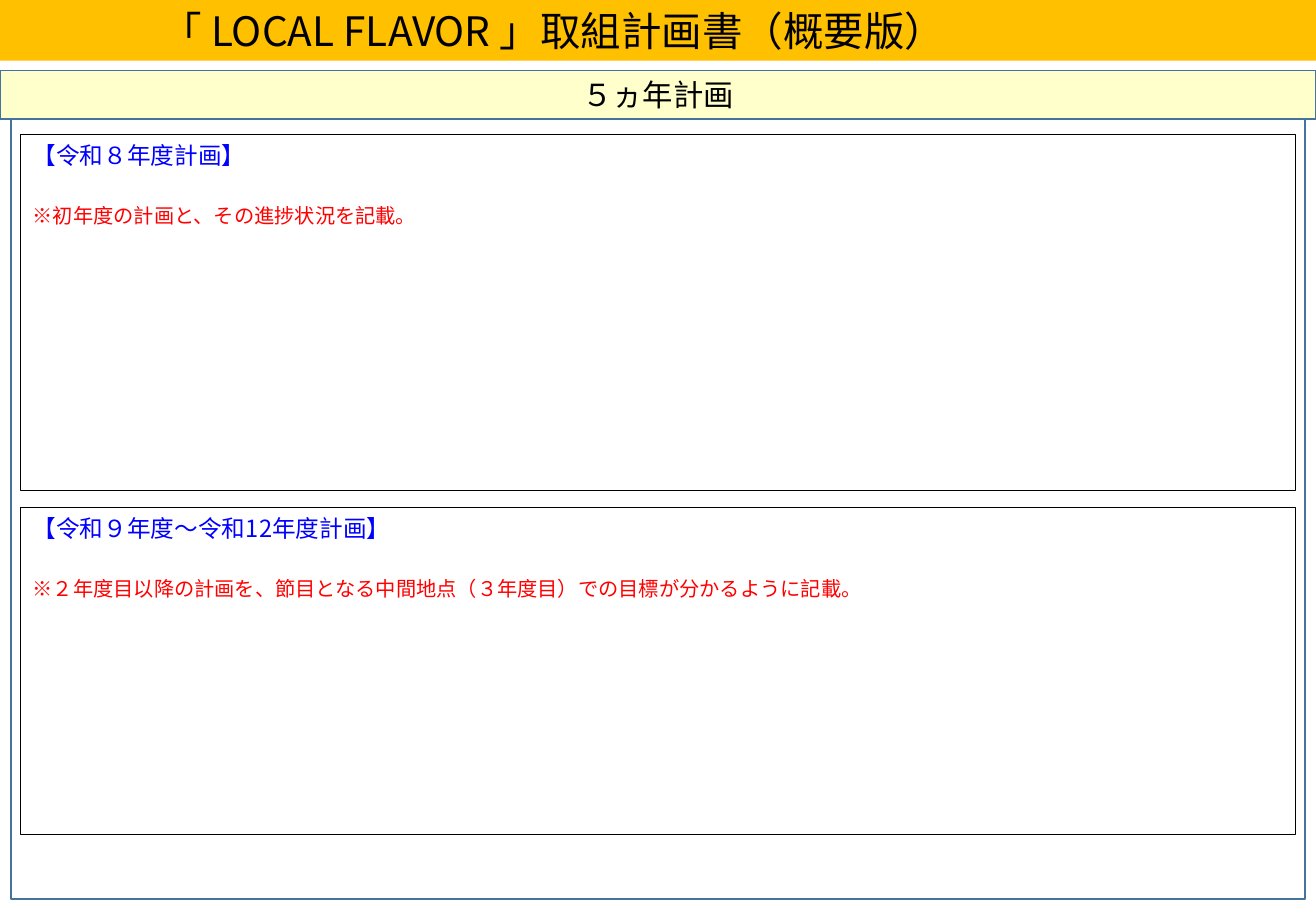
from lxml import etree
from pptx import Presentation
from pptx.dml.color import RGBColor
from pptx.enum import shapes, text
from pptx.oxml.ns import qn
from pptx.util import Inches, Pt

FONT = "Noto Sans CJK JP"
BLACK = RGBColor(0, 0, 0)
WHITE = RGBColor(255, 255, 255)
AMBER = RGBColor(0xFF, 0xC0, 0x00)
CREAM = RGBColor(0xFF, 0xFF, 0xCC)
STEEL = RGBColor(0x43, 0x73, 0x9E)
BLUE = RGBColor(0, 0, 255)
RED = RGBColor(255, 0, 0)

WIDTH, HEIGHT = 10.83, 7.5
PLANS = [
    (1.11, 2.93, "【令和８年度計画】", "※初年度の計画と、その進捗状況を記載。"),
    (4.18, 2.69, "【令和９年度～令和12年度計画】",
     "※２年度目以降の計画を、節目となる中間地点（３年度目）での目標が分かるように記載。"),
]


def style_paragraph(paragraph, size, color, align):
    """Format a whole paragraph, for Latin and Japanese letters alike."""
    paragraph.alignment = align
    paragraph.font.size = Pt(size)
    paragraph.font.color.rgb = color
    paragraph.font.name = FONT
    latin = paragraph._p.pPr.find(qn("a:defRPr")).find(qn("a:latin"))
    east_asian = etree.Element(qn("a:ea"), typeface=FONT)
    latin.addnext(east_asian)


def add_panel(slide, box, fill, line, line_width):
    """Add an outlined rectangle in the given box."""
    panel = slide.shapes.add_shape(
        shapes.MSO_SHAPE.RECTANGLE, *map(Inches, box))
    panel.shadow.inherit = False
    panel.fill.solid()
    panel.fill.fore_color.rgb = fill
    panel.line.color.rgb = line
    panel.line.width = Pt(line_width)
    return panel


def place_title(slide, box, wording):
    """Turn the title placeholder into the amber bar, text left of centre."""
    title = slide.shapes.title
    title.left, title.top, title.width, title.height = map(Inches, box)
    title.fill.solid()
    title.fill.fore_color.rgb = AMBER
    frame = title.text_frame
    frame.text = wording
    frame.auto_size = text.MSO_AUTO_SIZE.NONE
    frame.vertical_anchor = text.MSO_ANCHOR.MIDDLE
    frame.margin_top = frame.margin_bottom = 0
    frame.margin_right = Inches(1.82)
    style_paragraph(frame.paragraphs[0], 24, BLACK, text.PP_ALIGN.CENTER)


def add_heading(slide, box, wording):
    """Add the cream band that names the section."""
    frame = add_panel(slide, box, CREAM, STEEL, 0.75).text_frame
    frame.text = wording
    frame.vertical_anchor = text.MSO_ANCHOR.MIDDLE
    style_paragraph(frame.paragraphs[0], 18, BLACK, text.PP_ALIGN.CENTER)


def add_plan(slide, box, period, guidance):
    """Add a plan box with its period and a red writing hint."""
    frame = add_panel(slide, box, WHITE, BLACK, 0.75).text_frame
    frame.vertical_anchor = text.MSO_ANCHOR.TOP
    frame.text = period
    style_paragraph(frame.paragraphs[0], 14, BLUE, text.PP_ALIGN.LEFT)
    hint = frame.add_paragraph()
    hint.text = guidance
    hint.space_before = Pt(20)
    style_paragraph(hint, 12, RED, text.PP_ALIGN.LEFT)


def main():
    """Build the plan slide and save it."""
    deck = Presentation()
    deck.slide_width, deck.slide_height = Inches(WIDTH), Inches(HEIGHT)
    slide = deck.slides.add_slide(deck.slide_layouts.get_by_name("Title Only"))
    place_title(slide, (0, 0, WIDTH, 0.5), "「 LOCAL FLAVOR 」取組計画書（概要版）")
    add_panel(slide, (0.09, 0.96, 10.65, 6.44), WHITE, STEEL, 1)
    add_heading(slide, (0, 0.58, WIDTH, 0.4), "５ヵ年計画")
    for top, height, period, guidance in PLANS:
        add_plan(slide, (0.17, top, 10.49, height), period, guidance)
    deck.save("out.pptx")


if __name__ == "__main__":
    main()
